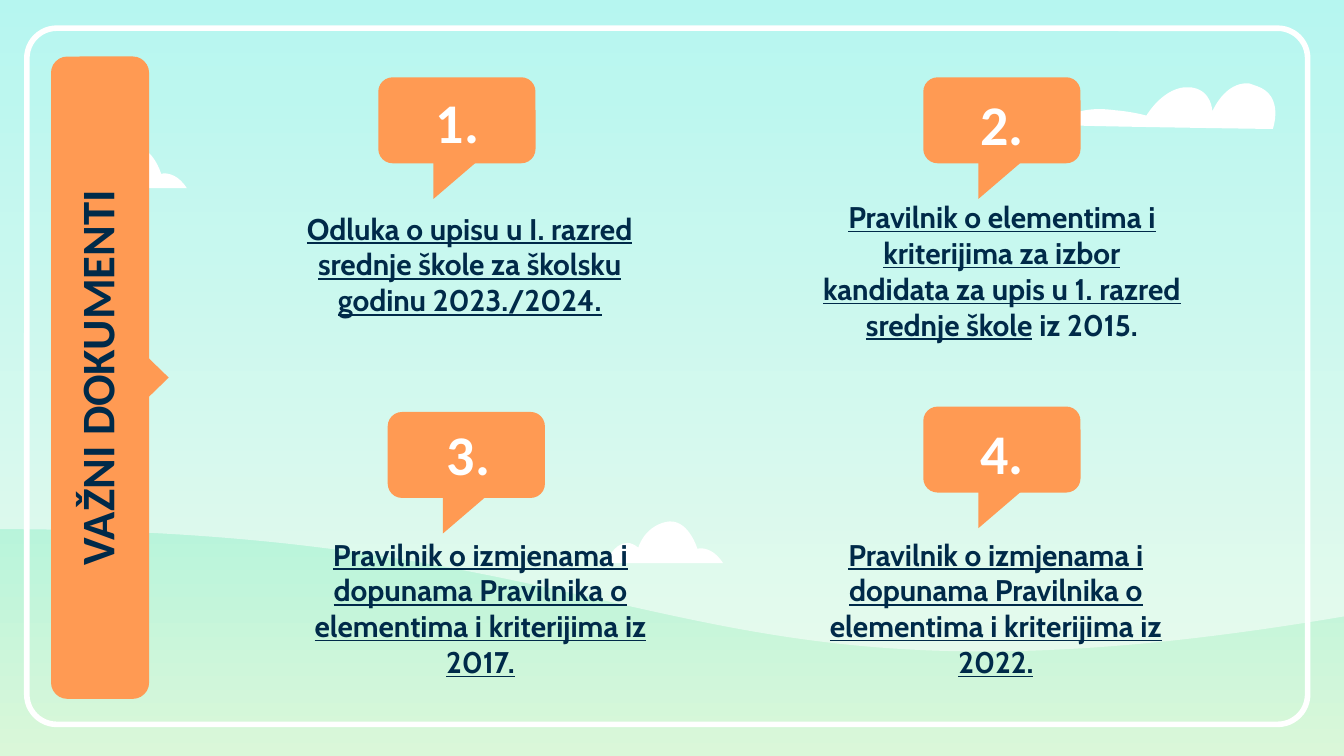
from lxml.etree import SubElement
from pptx import Presentation
from pptx.dml.color import RGBColor
from pptx.enum.shapes import MSO_SHAPE
from pptx.enum.text import MSO_ANCHOR, PP_ALIGN
from pptx.oxml.ns import qn
from pptx.util import Inches, Pt

ORANGE, WHITE, NAVY = "FF9A53", "FFFFFF", "002A49"
color = RGBColor.from_string

presentation = Presentation()
presentation.slide_width = Inches(10)
presentation.slide_height = Inches(10) * 9 // 16
slide = presentation.slides.add_slide(presentation.slide_layouts[6])

# Grid of 100 columns by 56.25 rows, so that each cell is square
column = presentation.slide_width / 100
row = presentation.slide_height / 56.25


def add_block(kind, left, top, width, height, rotation=0, fill=ORANGE, adjustment=None):
    """Add a borderless preset shape, placed in columns and rows."""
    shape = slide.shapes.add_shape(kind, int(left * column), int(top * row),
                                   int(width * column), int(height * row))
    shape.rotation = rotation
    shape.shadow.inherit = False
    shape.line.fill.background()
    if fill:
        shape.fill.solid()
        shape.fill.fore_color.rgb = color(fill)
    else:
        shape.fill.background()
    if adjustment is not None:
        shape.adjustments[0] = adjustment
    return shape


def add_text(runs, left, top, width, height, anchor, rotation=0, **font_format):
    """Add a centred paragraph made of (text, underline) runs."""
    box = slide.shapes.add_textbox(int(left * column), int(top * row),
                                   int(width * column), int(height * row))
    box.rotation = rotation
    frame_format = {"word_wrap": True, "vertical_anchor": anchor,
                    "margin_left": Inches(0.1), "margin_right": Inches(0.1),
                    "margin_top": Inches(0.1), "margin_bottom": Inches(0.1)}
    for name, value in frame_format.items():
        setattr(box.text_frame, name, value)
    paragraph = box.text_frame.paragraphs[0]
    paragraph.alignment = PP_ALIGN.CENTER
    text_color = font_format.pop("text_color")
    for text, underline in runs:
        run = paragraph.add_run()
        run.text = text
        run.font.color.rgb = color(text_color)
        for name, value in {**font_format, "bold": True, "underline": underline}.items():
            setattr(run.font, name, value)


# Sky gradient
background = slide.background.fill
background.gradient()
background.gradient_angle = 270
for stop, position, shade in zip(background.gradient_stops, (0, 1), ("67EEE0", "DAF7D9")):
    stop.position = position
    stop.color.rgb = color(shade)

# Translucent haze above the hills
haze = add_block(MSO_SHAPE.FLOWCHART_DOCUMENT, 0, 0, 100.1, 49.1, fill=WHITE)
haze._element.spPr.find(qn("a:xfrm")).set("flipH", "1")
haze_color = haze._element.spPr.find(qn("a:solidFill"))[0]
SubElement(haze_color, qn("a:alpha")).set("val", "52000")

# White frame
frame = add_block(MSO_SHAPE.ROUNDED_RECTANGLE, 2, 2.1, 95.3, 51.8, fill=None, adjustment=0.043)
frame.line.color.rgb = color(WHITE)
frame.line.width = Pt(3)

# Clouds: a start point, then segments of one point (line) or three (curve)
long_cloud = [[(92.9, 6.2)],
              [(91.1, 6.1), (90.2, 8.3), (90.2, 8.3)], [(90.2, 8.3), (90.2, 6.7), (88.6, 6.5)],
              [(88.5, 6.5), (88.3, 6.5), (88.1, 6.5)], [(86.4, 6.7), (85.3, 8.6), (85.3, 8.6)],
              [(85.3, 8.6), (84.2, 8.3), (82.9, 8.2)], [(81.5, 8), (79.7, 8.1), (78.7, 9.3)],
              [(78.7, 9.3), (78.7, 9.3), (78.8, 9.3)], [(80.3, 9.4), (94.7, 9.6), (94.7, 9.6)],
              [(94.7, 9.6), (95.6, 7.1), (93.5, 6.4)], [(93.3, 6.3), (93.1, 6.3), (92.9, 6.2)]]
small_cloud = [[(4.8, 0)],
               [(4.7, 0), (4.6, 0), (4.4, 0.05)], [(2.8, 0.45), (2.4, 1.95), (2.4, 1.95)],
               [(2.1, 1.7), (1.8, 1.6), (1.6, 1.6)], [(0.5, 1.6), (0, 3.1), (0, 3.1)],
               [(8.7, 3.1)], [(8.1, 2.15), (7.4, 2), (7, 2)],
               [(6.9, 2), (6.8, 2.05), (6.8, 2.05)], [(6.8, 2.05), (6.2, 0), (4.8, 0)]]
for segments, left, top in ((long_cloud, 0, 0), (small_cloud, 45.1, 38.8), (small_cloud, 5.2, 10.9)):
    points = [(int((left + x) * column), int((top + y) * row)) for segment in segments for x, y in segment]
    builder = slide.shapes.build_freeform(*points[0])
    builder.add_line_segments(points[1:], close=True)
    cloud = builder.convert_to_shape()
    cloud.shadow.inherit = False
    cloud.fill.solid()
    cloud.fill.fore_color.rgb = color(WHITE)
    cloud.line.fill.background()
    # Merge each three line points into one cubic curve
    lines = iter(list(cloud._element.iter(qn("a:lnTo"))))
    for segment in segments[1:]:
        curve, *handles = [next(lines) for point in segment]
        if handles:
            curve.tag = qn("a:cubicBezTo")
            for handle in handles:
                curve.append(handle[0])
                handle.getparent().remove(handle)

# Documents: number and its corner, bubble tail corner, text corner, runs
documents = [
    ("1.", 24.7, 6.4, 32.25, 11.8, 20.55, 14.65,
     [("Odluka o upisu u I. razred srednje škole za školsku godinu 2023./2024.", True)]),
    ("2.", 65.2, 6.5, 72.8, 11.8, 60.15, 13.8,
     [("Pravilnik o elementima i kriterijima za izbor kandidata za upis u 1. razred srednje škole", True),
      (" iz 2015.", False)]),
    ("3.", 25.5, 31.1, 32.95, 36.7, 21.35, 38.9,
     [("Pravilnik o izmjenama i dopunama Pravilnika o elementima i kriterijima iz 2017.", True)]),
    ("4.", 65.2, 31, 72.8, 36.3, 59.7, 38.9,
     [("Pravilnik o izmjenama i dopunama Pravilnika o elementima i kriterijima iz 2022.", True)]),
]
for number, number_left, number_top, tail_left, tail_top, text_left, text_top, runs in documents:
    add_block(MSO_SHAPE.ISOSCELES_TRIANGLE, tail_left, tail_top, 3.5, 3, 180, adjustment=1)
    add_block(MSO_SHAPE.ROUNDED_RECTANGLE, tail_left - 1.45, tail_top - 8.7, 6.4, 11.7, 270)
    add_text([(number, False)], number_left, number_top, 18.7, 5.3, MSO_ANCHOR.MIDDLE,
             name="Calibri", size=Pt(30), text_color=WHITE)
    add_text(runs, text_left, text_top, 28.8, 6.9, MSO_ANCHOR.TOP,
             name="Cabin", size=Pt(16), text_color=NAVY)

# Vertical title banner with its pointer
add_block(MSO_SHAPE.ISOSCELES_TRIANGLE, 10.05, 27.25, 3.3, 1.7, 90)
add_block(MSO_SHAPE.ROUNDED_RECTANGLE, -16.45, 24.45, 47.8, 7.3, 270)
add_text([("VAŽNI DOKUMENTI", False)], -7.75, 26.1, 31.9, 4, MSO_ANCHOR.BOTTOM, 270,
         name="Calibri", size=Pt(25), text_color=NAVY)

presentation.save("out.pptx")
